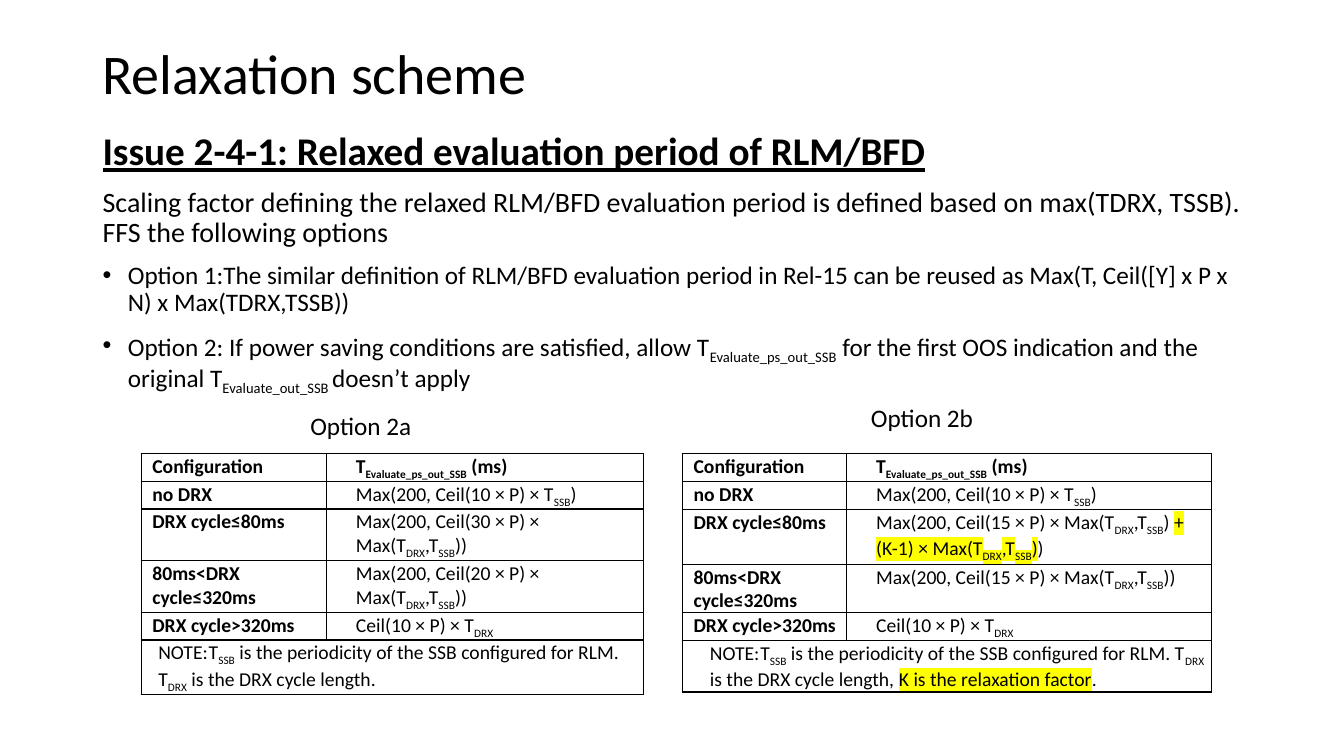
from collections import namedtuple
from dataclasses import dataclass

from lxml.etree import SubElement
from pptx import Presentation
from pptx.dml.color import RGBColor as Rgb
from pptx.enum.text import MSO_ANCHOR as Anchor, MSO_AUTO_SIZE as AutoSize, PP_ALIGN as Align
from pptx.oxml import parse_xml
from pptx.oxml.ns import nsdecls, qn
from pptx.util import Cm, Pt

Box = namedtuple("Box", "left top width height")


@dataclass(frozen=True)
class Theme:
    font: str = "Calibri"
    ink: str = "000000"
    paper: str = "FFFFFF"
    marker: str = "FFFF00"
    title: int = 40
    issue: int = 28
    lead: int = 20
    option: int = 18
    cell: int = 14


THEME = Theme()
ROW_HEIGHTS = (0.6, 0.6, 1.2, 1.2, 0.6, 1.29)
CONFIGURATIONS = ("Configuration", "no DRX", "DRX cycle≤80ms", "80ms<DRX cycle≤320ms", "DRX cycle>320ms")
HEADING = "T~Evaluate_ps_out_SSB~ (ms)"
NO_DRX = "Max(200, Ceil(10 × P) × T~SSB~)"
LONG_DRX = "Ceil(10 × P) × T~DRX~"
NOTE = "NOTE:\tT~SSB~ is the periodicity of the SSB configured for RLM. T~DRX~ is the DRX cycle length"


def scaled_period(factor):
    return f"Max(200, Ceil({factor} × P) × Max(T~DRX~,T~SSB~)"


BODY = (
    ("Issue 2-4-1: Relaxed evaluation period of RLM/BFD", THEME.issue, {"bold": True, "underline": True}, False),
    ("Scaling factor defining the relaxed RLM/BFD evaluation period is defined based on "
     "max(TDRX, TSSB). FFS the following options", THEME.lead, {}, False),
    ("Option 1:The similar definition of RLM/BFD evaluation period in Rel-15 can be reused as "
     "Max(T, Ceil([Y] x P x N) x Max(TDRX,TSSB))", THEME.option, {}, True),
    ("Option 2: If power saving conditions are satisfied, allow T~Evaluate_ps_out_SSB~ for the first "
     "OOS indication and the original T~Evaluate_out_SSB ~doesn’t apply", THEME.option, {}, True),
)
OPTIONS = (
    {
        "box": Box(3.56, 11.43, 12.65, sum(ROW_HEIGHTS)),
        "caption": "Option 2a", "caption_shift": (4.01, -1.22),
        "first_column": 4.67, "note_indent": 0.25, "fill": THEME.paper,
        "periods": (HEADING, NO_DRX, scaled_period(30) + ")", scaled_period(20) + ")", LONG_DRX),
        "note": NOTE + ".",
    },
    {
        "box": Box(17.2, 11.43, 13.33, sum(ROW_HEIGHTS)),
        "caption": "Option 2b", "caption_shift": (4.5, -1.42),
        "first_column": 4.14, "note_indent": 0.51, "fill": None,
        "periods": (HEADING, NO_DRX, scaled_period(15) + " ^+ (K-1) × Max(T~DRX~,T~SSB~)^)",
                    scaled_period(15) + ")", LONG_DRX),
        "note": NOTE + ", ^K is the relaxation factor^.",
    },
)


def apply(target, formats):
    for name, value in formats.items():
        setattr(target, name, value)


def write(para, text, size, **formats):
    for marked, part in enumerate(text.split("^")):
        for lowered, piece in enumerate(part.split("~")):
            if not piece:
                continue
            span = para.add_run()
            span.text = piece
            apply(span.font, {"name": THEME.font, "size": Pt(size), **formats})
            span.font.color.rgb = Rgb.from_string(THEME.ink)
            properties = span.font._element
            if lowered % 2:
                properties.set("baseline", "-25000")
            if marked % 2:
                properties.find(qn("a:solidFill")).addnext(parse_xml(
                    f'<a:highlight {nsdecls("a")}><a:srgbClr val="{THEME.marker}"/></a:highlight>'))


def indent(para, left, hanging=0):
    properties = para._p.get_or_add_pPr()
    properties.set("marL", str(Cm(left)))
    properties.set("indent", str(-Cm(hanging)))
    return properties


def place(shape, box):
    apply(shape, {name: Cm(value) for name, value in box._asdict().items()})


def add_title(page, box):
    title = page.shapes.title
    place(title, box)
    apply(title.text_frame, {"vertical_anchor": Anchor.MIDDLE, "auto_size": AutoSize.NONE})
    para = title.text_frame.paragraphs[0]
    apply(para, {"alignment": Align.LEFT, "line_spacing": 0.9})
    write(para, "Relaxation scheme", THEME.title)


def add_body(page, box):
    body = page.placeholders[1]
    place(body, box)
    frame = body.text_frame
    apply(frame, {"vertical_anchor": Anchor.TOP, "auto_size": AutoSize.NONE})
    for index, (text, size, formats, bulleted) in enumerate(BODY):
        para = frame.add_paragraph() if index else frame.paragraphs[0]
        apply(para, {"alignment": Align.LEFT, "line_spacing": 0.9, "space_before": Pt(10)})
        step = 0.64 if bulleted else 0
        properties = indent(para, step, step)
        if bulleted:
            SubElement(properties, qn("a:buFont")).set("typeface", "Arial")
            SubElement(properties, qn("a:buChar")).set("char", "•")
        else:
            SubElement(properties, qn("a:buNone"))
        write(para, text, size, **formats)


def style_cell(cell, fill):
    apply(cell, {"margin_left": Cm(0.18), "margin_right": Cm(0.18),
                 "margin_top": Cm(0.03), "margin_bottom": 0, "vertical_anchor": Anchor.TOP})
    properties = cell._tc.get_or_add_tcPr()
    for side in ("lnL", "lnR", "lnT", "lnB"):
        properties.append(parse_xml(
            f'<a:{side} {nsdecls("a")} w="{Pt(1)}"><a:solidFill><a:srgbClr val="{THEME.ink}"/>'
            f'</a:solidFill></a:{side}>'))
    if fill:
        cell.fill.solid()
        cell.fill.fore_color.rgb = Rgb.from_string(fill)
    else:
        cell.fill.background()


def fill_cell(cell, text, left, bold):
    para = cell.text_frame.paragraphs[0]
    para.space_before = Pt(5)
    indent(para, left)
    write(para, text, THEME.cell, bold=bold)


def add_caption(page, box, text):
    caption = page.shapes.add_textbox(*map(Cm, box))
    apply(caption.text_frame, {"word_wrap": False, "auto_size": AutoSize.SHAPE_TO_FIT_TEXT})
    write(caption.text_frame.paragraphs[0], text, THEME.option)


def add_option(page, box, option):
    table = page.shapes.add_table(len(ROW_HEIGHTS), 2, *map(Cm, box)).table
    apply(table, {"first_row": False, "horz_banding": False})
    first = option["first_column"]
    for column, width in zip(table.columns, (first, box.width - first)):
        column.width = Cm(width)
    for row, height in zip(table.rows, ROW_HEIGHTS):
        row.height = Cm(height)
    for cell in table.iter_cells():
        style_cell(cell, option["fill"])
    for index, (configuration, period) in enumerate(zip(CONFIGURATIONS, option["periods"])):
        fill_cell(table.cell(index, 0), configuration, 0.1, True)
        fill_cell(table.cell(index, 1), period, 0.56, index == 0)
    last = len(ROW_HEIGHTS) - 1
    table.cell(last, 0).merge(table.cell(last, 1))
    fill_cell(table.cell(last, 0), option["note"], option["note_indent"], False)
    across, down = option["caption_shift"]
    add_caption(page, Box(box.left + across, box.top + down, 3.11, 1.02), option["caption"])


def main():
    deck = Presentation()
    apply(deck, {"slide_width": Cm(33.87), "slide_height": Cm(19.05)})
    page = deck.slides.add_slide(deck.slide_layouts[1])
    add_title(page, Box(2.33, 1.02, 29.21, 1.8))
    add_body(page, Box(2.33, 3.2, 29.21, 13.94))
    for option in OPTIONS:
        add_option(page, option["box"], option)
    deck.save("out.pptx")


if __name__ == "__main__":
    main()
